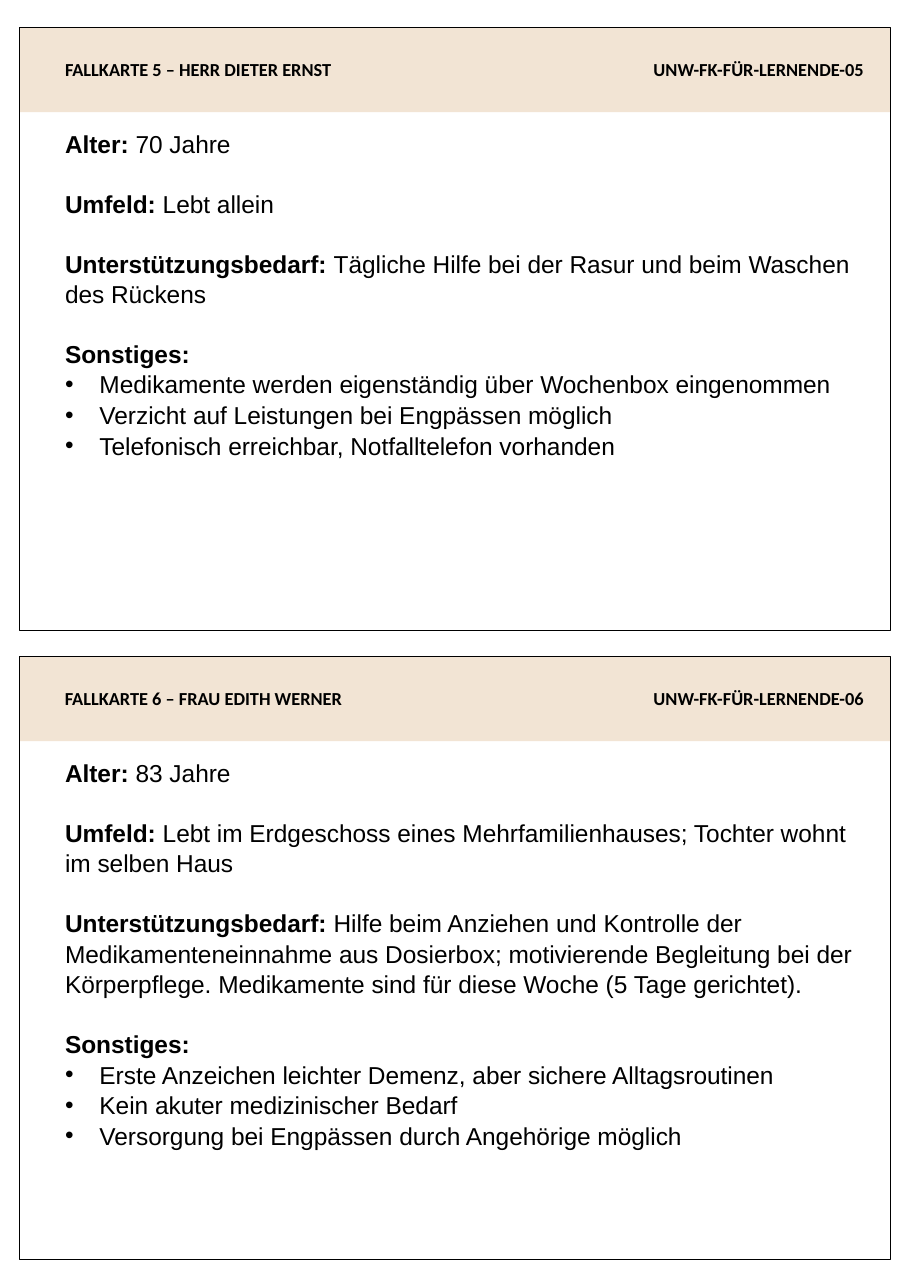
import pptx
import pptx.util
import pptx.dml.color
import pptx.enum.shapes
import pptx.enum.text
import lxml.etree

Pt = pptx.util.Pt
RGB = pptx.dml.color.RGBColor
ALIGN = pptx.enum.text.PP_ALIGN

# Content: heading, code, labelled facts, list under the last label
CARDS = [
    dict(
        head="FALLKARTE 5 – HERR DIETER ERNST",
        code="UNW-FK-FÜR-LERNENDE-05",
        facts=[
            ("Alter: ", "70 Jahre"),
            ("Umfeld: ", "Lebt allein"),
            ("Unterstützungsbedarf: ",
             "Tägliche Hilfe bei der Rasur und beim Waschen des Rückens"),
            ("Sonstiges:", ""),
        ],
        notes=[
            "Medikamente werden eigenständig über Wochenbox eingenommen",
            "Verzicht auf Leistungen bei Engpässen möglich",
            "Telefonisch erreichbar, Notfalltelefon vorhanden",
        ],
    ),
    dict(
        head="FALLKARTE 6 – FRAU EDITH WERNER",
        code="UNW-FK-FÜR-LERNENDE-06",
        facts=[
            ("Alter: ", "83 Jahre"),
            ("Umfeld: ", "Lebt im Erdgeschoss eines Mehrfamilienhauses; "
             "Tochter wohnt im selben Haus"),
            ("Unterstützungsbedarf: ",
             "Hilfe beim Anziehen und Kontrolle der Medikamenteneinnahme aus "
             "Dosierbox; motivierende Begleitung bei der Körperpflege. "
             "Medikamente sind für diese Woche (5 Tage gerichtet)."),
            ("Sonstiges:", ""),
        ],
        notes=[
            "Erste Anzeichen leichter Demenz, aber sichere Alltagsroutinen",
            "Kein akuter medizinischer Bedarf",
            "Versorgung bei Engpässen durch Angehörige möglich",
        ],
    ),
]

# Theme
THEME = dict(
    ink=RGB.from_string("000000"),
    band=RGB.from_string("F2E4D4"),
    head=dict(name="Calibri", size=Pt(12), bold=True),
    body=dict(name="Arial", size=Pt(16)),
)
FRAME = dict(
    word_wrap=True,
    auto_size=pptx.enum.text.MSO_AUTO_SIZE.NONE,
    vertical_anchor=pptx.enum.text.MSO_ANCHOR.TOP,
    margin_left=Pt(7.2), margin_right=Pt(7.2),
    margin_top=Pt(3.6), margin_bottom=Pt(3.6),
)

# Layout in points
LEFT, TOP, WIDE, HIGH, STEP = 13, 18, 569, 394.3, 411.1
BAND = 55.3
TEXT_X, TEXT_W = 35.3, 536.4
CODE_W = 238.3
HEAD_DY, HEAD_H = 16.5, 21.6
BODY_DY, BODY_H = 62, 280
GAP, LEAD, INDENT = 19.1, 1.04, 22.5


def assign(item, **values):
    for key, value in values.items():
        setattr(item, key, value)


def place(shape, left, top, width, height):
    assign(shape, left=Pt(left), top=Pt(top),
           width=Pt(width), height=Pt(height))


def panel(shapes, height, top):
    box = shapes.add_shape(pptx.enum.shapes.MSO_SHAPE.RECTANGLE,
                           Pt(LEFT), Pt(top), Pt(WIDE), Pt(height))
    box.shadow.inherit = False
    return box


def write(para, text, style, **more):
    run = para.add_run()
    run.text = text
    assign(run.font, **{**style, **more})
    run.font.color.rgb = THEME["ink"]


def bullet(para, sign=None):
    props = para._p.get_or_add_pPr()
    indent = Pt(INDENT) if sign else 0
    props.set("marL", str(indent))
    props.set("indent", str(-indent))
    space = props.nsmap["a"]
    if sign:
        font = lxml.etree.SubElement(props, f"{{{space}}}buFont")
        font.set("typeface", THEME["body"]["name"])
        mark = lxml.etree.SubElement(props, f"{{{space}}}buChar")
        mark.set("char", sign)
    else:
        lxml.etree.SubElement(props, f"{{{space}}}buNone")


def label(shape, text, align):
    assign(shape.text_frame, **FRAME)
    para = shape.text_frame.paragraphs[0]
    para.alignment = align
    write(para, text, THEME["head"])


def fill_body(shape, card):
    frame = shape.text_frame
    assign(frame, **FRAME)
    rows = [(name, text, None) for name, text in card["facts"]]
    rows += [("", text, "•") for text in card["notes"]]
    for num, (name, text, sign) in enumerate(rows):
        para = frame.add_paragraph() if num else frame.paragraphs[0]
        bullet(para, sign)
        assign(para, line_spacing=LEAD, alignment=ALIGN.LEFT,
               space_before=Pt(GAP if num and not sign else 0))
        for part, bold in ((name, True), (text, False)):
            if part:
                write(para, part, THEME["body"], bold=bold)


def main():
    deck = pptx.Presentation()
    assign(deck, slide_width=Pt(594.72), slide_height=Pt(841.68))
    slide = deck.slides.add_slide(deck.slide_layouts[3])
    shapes = slide.shapes
    title, *bodies = slide.placeholders

    for num, (card, body) in enumerate(zip(CARDS, bodies)):
        top = TOP + num * STEP

        # Header band and card outline
        band = panel(shapes, BAND, top)
        band.fill.solid()
        band.fill.fore_color.rgb = THEME["band"]
        band.line.fill.background()
        edge = panel(shapes, HIGH, top)
        edge.fill.background()
        edge.line.color.rgb = THEME["ink"]
        edge.line.width = Pt(0.75)

        # Heading on the left, code on the right
        head = shapes.add_textbox(0, 0, 0, 0) if num else title
        shapes._spTree.append(head._element)
        place(head, TEXT_X, top + HEAD_DY, TEXT_W - CODE_W, HEAD_H)
        label(head, card["head"], ALIGN.LEFT)
        code = shapes.add_textbox(0, 0, 0, 0)
        place(code, TEXT_X + TEXT_W - CODE_W, top + HEAD_DY, CODE_W, HEAD_H)
        label(code, card["code"], ALIGN.RIGHT)

        # Facts and list
        shapes._spTree.append(body._element)
        place(body, TEXT_X, top + BODY_DY, TEXT_W, BODY_H)
        fill_body(body, card)

    deck.save("out.pptx")


if __name__ == "__main__":
    main()
